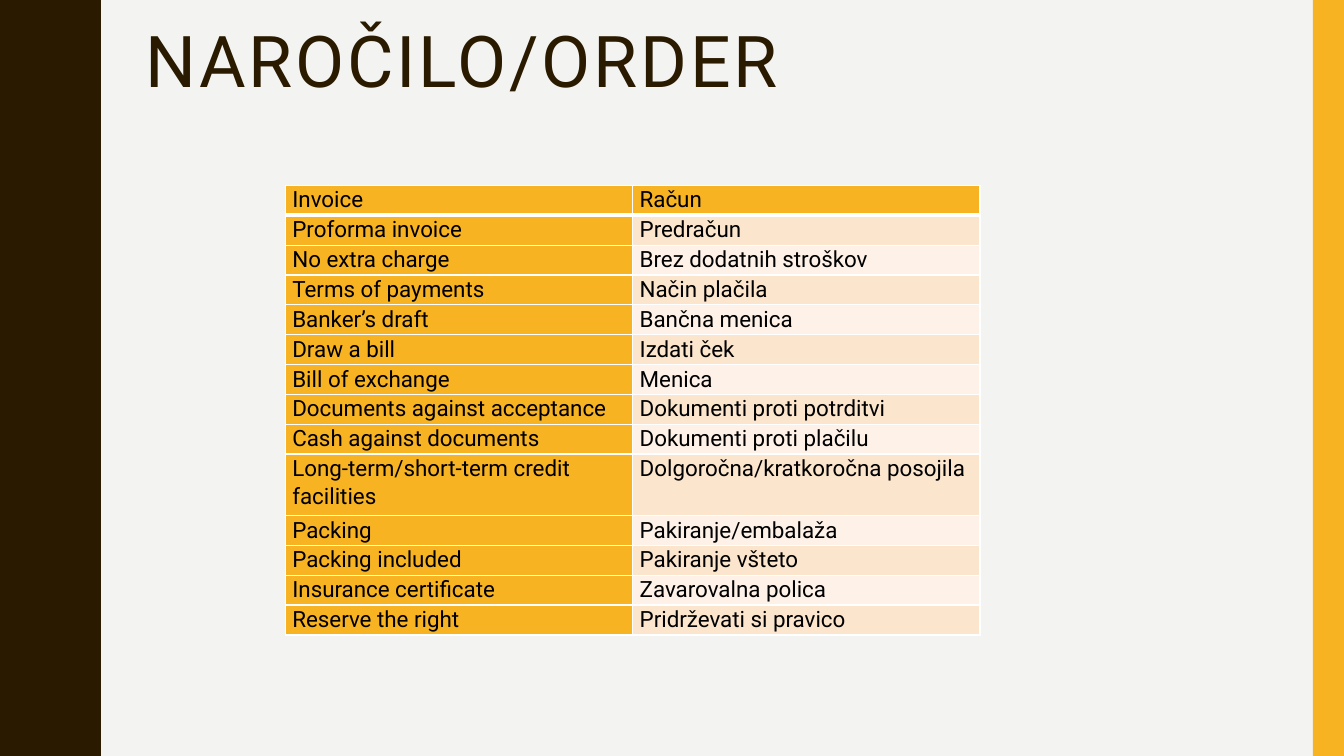
from pptx import Presentation
from pptx.dml.color import RGBColor
from pptx.enum.shapes import MSO_SHAPE as Preset
from pptx.enum.text import MSO_ANCHOR as Anchor, PP_ALIGN as Align
from pptx.oxml import parse_xml
from pptx.oxml.ns import nsdecls
from pptx.util import Inches, Pt

# Content
TITLE = "NAROČILO/ORDER"
TERMS = [
    ("Invoice", "Račun"),
    ("Proforma invoice", "Predračun"),
    ("No extra charge", "Brez dodatnih stroškov"),
    ("Terms of payments", "Način plačila"),
    ("Banker’s draft", "Bančna menica"),
    ("Draw a bill", "Izdati ček"),
    ("Bill of exchange", "Menica"),
    ("Documents against acceptance", "Dokumenti proti potrditvi"),
    ("Cash against documents", "Dokumenti proti plačilu"),
    ("Long-term/short-term credit facilities", "Dolgoročna/kratkoročna posojila"),
    ("Packing", "Pakiranje/embalaža"),
    ("Packing included", "Pakiranje všteto"),
    ("Insurance certificate", "Zavarovalna polica"),
    ("Reserve the right", "Pridrževati si pravico"),
]
TALL_ROW = 9

# Look
COLOURS = {"paper": "F3F3F2", "brown": "2A1A00", "gold": "F8B323", "peach": "FCE5CD",
           "cream": "FEF2E8", "white": "FFFFFF", "black": "000000"}
FONT = "Roboto"

# Layout, in inches
WIDTH, HEIGHT = 13.33, 7.5
BAR_WIDTH = 0.31
TABLE_LEFT, TABLE_TOP, TABLE_WIDTH, TABLE_HEIGHT = 2.83, 1.84, 6.89, 4.46
TALL_HEIGHT = 0.61
ROW_HEIGHT = (TABLE_HEIGHT - TALL_HEIGHT) / (len(TERMS) - 1)

# Outward half of one wave as (x, y); the other half mirrors it
WAVES = 5
WAVE_HEIGHT = HEIGHT / WAVES
SWELL = [(0.78, 0), (0.78, 0.07), (0.79, 0.14), (0.8, 0.2), (0.81, 0.25),
         (0.83, 0.29), (0.85, 0.33), (0.87, 0.38), (0.89, 0.42), (0.91, 0.46),
         (0.93, 0.5), (0.95, 0.55), (0.96, 0.61), (0.97, 0.68), (0.97, 0.75)]


def colour(name):
    return RGBColor.from_string(COLOURS[name])


def paint(shape, name):
    shape.fill.solid()
    shape.fill.fore_color.rgb = colour(name)
    shape.line.fill.background()
    shape.shadow.inherit = False


def write(para, text, size, name, spacing):
    para.alignment = Align.LEFT
    para.line_spacing = spacing
    span = para.add_run()
    span.text = text
    span.font.name = FONT
    span.font.size = Pt(size)
    span.font.bold = False
    span.font.color.rgb = colour(name)
    return span


def add_borders(cell, widths):
    properties = cell._tc.get_or_add_tcPr()
    for place, (side, width) in enumerate(widths.items()):
        properties.insert(place, parse_xml(
            f'<a:{side} {nsdecls("a")} w="{Pt(width)}"><a:solidFill>'
            f'<a:srgbClr val="{COLOURS["white"]}"/></a:solidFill></a:{side}>'))


def add_wave(page):
    wave = SWELL + [(x, WAVE_HEIGHT - y) for x, y in SWELL[-2::-1]]
    edge = [(x, y + turn * WAVE_HEIGHT) for turn in range(WAVES) for x, y in wave]
    outline = page.shapes.build_freeform(0, 0, scale=Inches(1))
    outline.add_line_segments(edge + [(0, HEIGHT)], close=True)
    paint(outline.convert_to_shape(), "brown")


def add_bar(page):
    bar = page.shapes.add_shape(Preset.RECTANGLE, Inches(WIDTH - BAR_WIDTH), 0,
                                Inches(BAR_WIDTH), Inches(HEIGHT))
    paint(bar, "gold")


def add_title(page):
    title = page.shapes.title
    title.left, title.top = Inches(1.34), Inches(0.21)
    title.width, title.height = Inches(11.13), Inches(1.63)
    frame = title.text_frame
    frame.word_wrap = True
    frame.vertical_anchor = Anchor.TOP
    span = write(frame.paragraphs[0], TITLE, 51, "brown", 0.9)
    span.font._element.set("spc", "200")


def add_terms(page):
    table = page.shapes.add_table(
        len(TERMS), 2, Inches(TABLE_LEFT), Inches(TABLE_TOP),
        Inches(TABLE_WIDTH), Inches(TABLE_HEIGHT)).table
    table.horz_banding = False
    table.first_col = True
    for column in table.columns:
        column.width = Inches(TABLE_WIDTH / 2)
    for r, terms in enumerate(TERMS):
        table.rows[r].height = Inches(TALL_HEIGHT if r == TALL_ROW else ROW_HEIGHT)
        for c, term in enumerate(terms):
            cell = table.cell(r, c)
            cell.margin_left = cell.margin_right = Inches(0.07)
            cell.margin_top = cell.margin_bottom = 0
            cell.vertical_anchor = Anchor.TOP
            band = "peach" if r % 2 else "cream"
            cell.fill.solid()
            cell.fill.fore_color.rgb = colour("gold" if r == 0 or c == 0 else band)
            add_borders(cell, {"lnL": 1, "lnR": 1, "lnT": 3 if r == 1 else 1,
                               "lnB": 3 if r == 0 else 1})
            write(cell.text_frame.paragraphs[0], term, 16, "black", 1.07)


def main():
    deck = Presentation()
    deck.slide_width, deck.slide_height = Inches(WIDTH), Inches(HEIGHT)
    page = deck.slides.add_slide(deck.slide_layouts[5])
    page.background.fill.solid()
    page.background.fill.fore_color.rgb = colour("paper")
    add_wave(page)
    add_bar(page)
    add_title(page)
    add_terms(page)
    deck.save("out.pptx")


if __name__ == "__main__":
    main()
